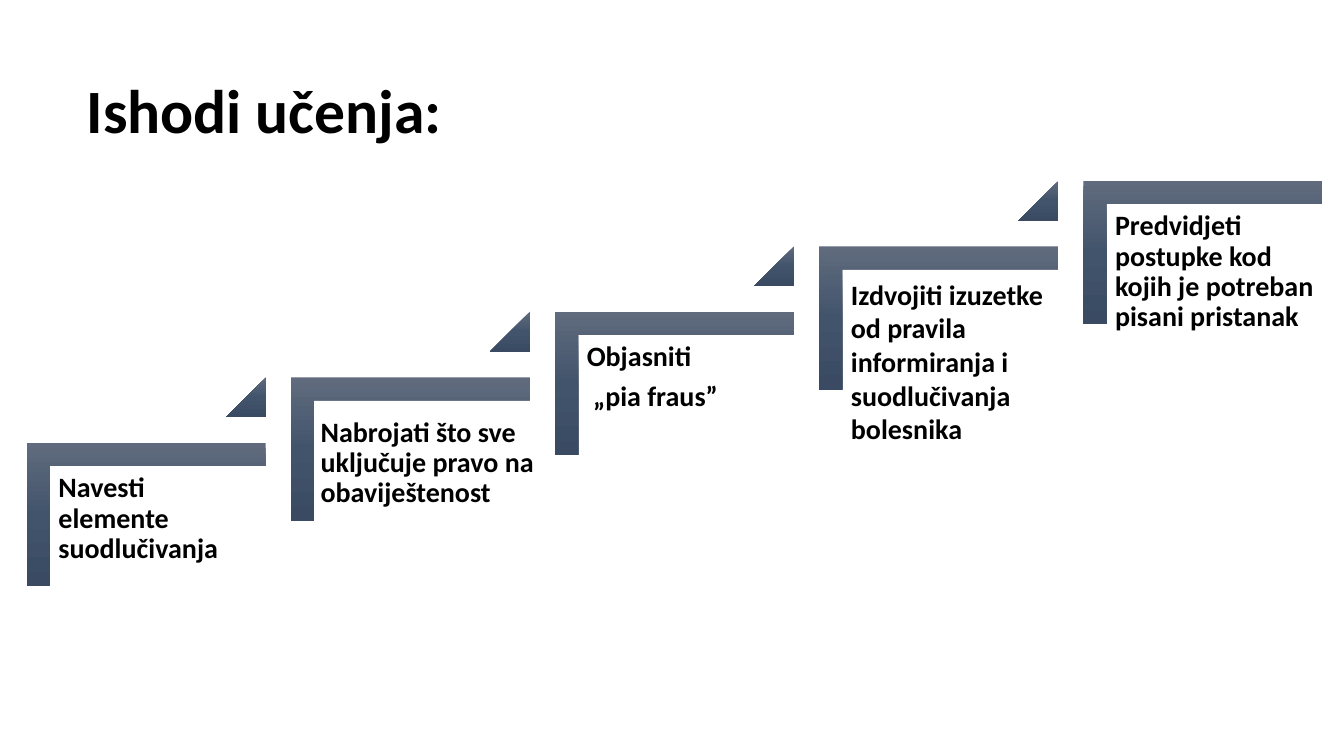
from dataclasses import dataclass

from lxml import etree
from pptx import Presentation
from pptx import util as u
from pptx.dml.color import RGBColor
from pptx.enum import shapes, text
from pptx.oxml import ns


@dataclass(frozen=True)
class Theme:
    font: str = "Calibri"
    ink: str = "000000"
    head: int = 44
    body: int = 20
    after: int = 7
    tight: float = 0.9
    shade: tuple = ((0, "606B7D"), (50, "42546C"), (100, "394A62"))


THEME = Theme()
CORNER = shapes.MSO_SHAPE.from_xml("corner")
RISE = 0.65
PITCH = 2.62
STEPS = (
    {"lines": ["Navesti elemente suodlučivanja"]},
    {"lines": ["Nabrojati što sve uključuje pravo na obaviještenost"],
     "shift": (-0.02, 0.1), "width": 2.47},
    {"lines": ["Objasniti", " „pia fraus”"]},
    {"lines": ["Izdvojiti izuzetke od pravila informiranja i suodlučivanja bolesnika"],
     "space": 1.0},
    {"lines": ["Predvidjeti postupke kod kojih je potreban pisani pristanak"]},
)


def apply(item, form):
    for name, value in form.items():
        setattr(item, name, value)


def place(item, left, top, width, height):
    apply(item, {"left": u.Inches(left), "top": u.Inches(top),
                 "width": u.Inches(width), "height": u.Inches(height)})


def write(frame, lines, size, space, after=0):
    for i, line in enumerate(lines):
        para = frame.add_paragraph() if i else frame.paragraphs[0]
        apply(para, {"alignment": text.PP_ALIGN.LEFT, "line_spacing": space,
                     "space_before": u.Pt(0), "space_after": u.Pt(after)})
        run = para.add_run()
        run.text = line
        apply(run.font, {"name": THEME.font, "size": u.Pt(size), "bold": True})
        run.font.color.rgb = RGBColor.from_string(THEME.ink)


def shade(shape):
    shape.fill.gradient()
    grad = shape._element.spPr.find(ns.qn("a:gradFill"))
    grad.set("rotWithShape", "0")
    stops = grad.find(ns.qn("a:gsLst"))
    for stop in list(stops):
        stops.remove(stop)
    for part, tint in THEME.shade:
        stop = etree.SubElement(stops, ns.qn("a:gs"), pos=str(part * 1000))
        etree.SubElement(stop, ns.qn("a:srgbClr"), val=tint)
    grad.find(ns.qn("a:lin")).set("ang", "5400000")


def block(slide, kind, box, adjust, turn=0):
    shape = slide.shapes.add_shape(kind, *map(u.Inches, box))
    shape.rotation = turn
    for i, value in enumerate(adjust):
        shape.adjustments[i] = value
    shape.shadow.inherit = False
    shape.line.fill.background()
    shade(shape)


def title(slide, box):
    head = slide.shapes.title
    place(head, *box)
    apply(head.text_frame, {"vertical_anchor": text.MSO_ANCHOR.MIDDLE, "word_wrap": True})
    write(head.text_frame, ["Ishodi učenja:"], THEME.head, THEME.tight)


def step(slide, x, y, lines, shift=(0, 0), width=2.14, space=THEME.tight):
    block(slide, CORNER, (x + 0.48, y - 0.48, 1.42, 2.37), (0.16, 0.16), 90)
    box = (x + 0.24 + shift[0], y + 0.22 + shift[1], width, 1.87)
    frame = slide.shapes.add_textbox(*map(u.Inches, box)).text_frame
    inset = u.Inches(0.08)
    apply(frame, {"word_wrap": True, "vertical_anchor": text.MSO_ANCHOR.TOP,
                  "margin_left": inset, "margin_right": inset,
                  "margin_top": inset, "margin_bottom": inset})
    write(frame, lines, THEME.body, space, THEME.after)


def stairs(slide, x, y):
    for i, form in enumerate(STEPS):
        left, top = x + i * PITCH, y - i * RISE
        step(slide, left, top, **form)
        if i < len(STEPS) - 1:
            block(slide, shapes.MSO_SHAPE.ISOSCELES_TRIANGLE,
                  (left + 1.98, top - 0.66, 0.4, 0.4), (1,))


def main():
    deck = Presentation()
    apply(deck, {"slide_width": u.Inches(13.33), "slide_height": u.Inches(7.5)})
    slide = deck.slides.add_slide(deck.slide_layouts[5])
    title(slide, (0.76, 0.4, 11.66, 1.45))
    stairs(slide, 0.26, 4.4)
    deck.save("out.pptx")


if __name__ == "__main__":
    main()
